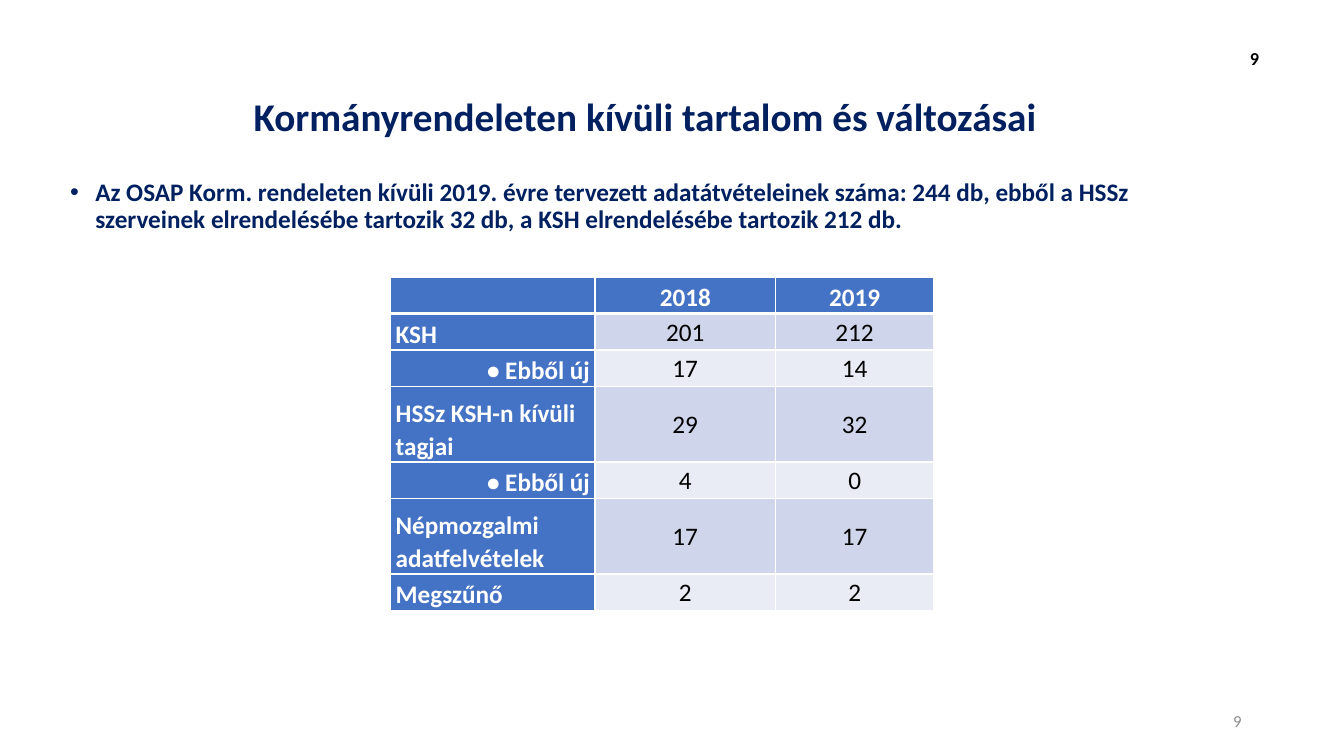
from lxml.etree import SubElement
from pptx import Presentation
from pptx.dml.color import RGBColor
from pptx.enum.text import MSO_ANCHOR as Anchor, MSO_AUTO_SIZE as AutoSize, PP_ALIGN as Align
from pptx.oxml import parse_xml
from pptx.oxml.ns import nsdecls, qn
from pptx.util import Pt

FONT = "Calibri"
NAVY = RGBColor(0x00, 0x20, 0x60)
BLUE = RGBColor(0x44, 0x72, 0xC4)
BAND_DARK = RGBColor(0xCF, 0xD5, 0xEA)
BAND_LIGHT = RGBColor(0xE9, 0xEB, 0xF5)
WHITE = RGBColor(0xFF, 0xFF, 0xFF)
BLACK = RGBColor(0x00, 0x00, 0x00)
GRAY = RGBColor(0x8C, 0x8C, 0x8C)

COLUMN_WIDTHS = (146, 129, 113)
SINGLE_ROW, DOUBLE_ROW = 26, 54
TABLE_ROWS = (
    ("", "2018", "2019"),
    ("KSH", "201", "212"),
    ("• Ebből új", "17", "14"),
    ("HSSz KSH-n kívüli tagjai", "29", "32"),
    ("• Ebből új", "4", "0"),
    ("Népmozgalmi adatfelvételek", "17", "17"),
    ("Megszűnő", "2", "2"),
)


def style_paragraph(paragraph, size, color, bold=False, align=Align.LEFT, spacing=1.0):
    """Set the font, alignment and line spacing of a paragraph."""
    paragraph.alignment = align
    paragraph.line_spacing = spacing
    font = paragraph.font
    font.name, font.size, font.bold = FONT, Pt(size), bold
    font.color.rgb = color


def add_text(slide, box, text, anchor):
    """Add a wrapping text box and return its paragraph."""
    frame = slide.shapes.add_textbox(*map(Pt, box)).text_frame
    frame.word_wrap = True
    frame.vertical_anchor = anchor
    paragraph = frame.paragraphs[0]
    paragraph.text = text
    return paragraph


def add_title(slide, box, text):
    """Place and format the title placeholder."""
    title = slide.shapes.title
    title.left, title.top, title.width, title.height = map(Pt, box)
    frame = title.text_frame
    frame.text = text
    frame.auto_size = AutoSize.NONE
    frame.vertical_anchor = Anchor.MIDDLE
    style_paragraph(frame.paragraphs[0], 28, NAVY, True, spacing=0.9)


def add_bullet(slide, box, text):
    """Add a bulleted statement with a hanging indent."""
    paragraph = add_text(slide, box, text, Anchor.TOP)
    properties = paragraph._p.get_or_add_pPr()
    properties.set("marL", str(Pt(18)))
    properties.set("indent", str(-Pt(18)))
    SubElement(properties, qn("a:buFont"), typeface="Arial")
    SubElement(properties, qn("a:buChar"), char="•")
    style_paragraph(paragraph, 18, NAVY, True, spacing=0.9)


def add_page_number(slide, box, size, color, bold):
    """Add a right-aligned page number."""
    paragraph = add_text(slide, box, "9", Anchor.MIDDLE)
    style_paragraph(paragraph, size, color, bold, Align.RIGHT)


def set_borders(cell, top, bottom):
    """Draw white cell borders with the given top and bottom widths."""
    properties = cell._tc.get_or_add_tcPr()
    for index, (side, width) in enumerate(zip("LRTB", (1, 1, top, bottom))):
        properties.insert(index, parse_xml(
            f'<a:ln{side} {nsdecls("a")} w="{Pt(width)}"><a:solidFill>'
            f'<a:srgbClr val="{WHITE}"/></a:solidFill></a:ln{side}>'))


def fill_cell(cell, text, row, column):
    """Write and format one table cell according to its place."""
    heading = row == 0 or column == 0
    band = BAND_DARK if row % 2 else BAND_LIGHT
    cell.fill.solid()
    cell.fill.fore_color.rgb = BLUE if heading else band
    set_borders(cell, 3 if row == 1 else 1, 3 if row == 0 else 1)
    cell.margin_left = cell.margin_right = Pt(3.6)
    cell.margin_top = cell.margin_bottom = 0
    cell.vertical_anchor = Anchor.BOTTOM if heading else Anchor.MIDDLE
    if column:
        align = Align.CENTER
    else:
        align = Align.RIGHT if text.startswith("•") else Align.LEFT
    paragraph = cell.text_frame.paragraphs[0]
    if text:
        paragraph.text = text
    style_paragraph(paragraph, 18, WHITE if heading else BLACK, heading, align, 1.07)


def add_data_table(slide, left, top):
    """Add the table of yearly counts at the given corner."""
    heights = [DOUBLE_ROW if " " in row[0] and not row[0].startswith("•") else SINGLE_ROW
               for row in TABLE_ROWS]
    box = (left, top, sum(COLUMN_WIDTHS), sum(heights))
    table = slide.shapes.add_table(
        len(TABLE_ROWS), len(COLUMN_WIDTHS), *map(Pt, box)).table
    table.first_row = table.horz_banding = False
    for column, width in zip(table.columns, COLUMN_WIDTHS):
        column.width = Pt(width)
    for row, (height, texts) in enumerate(zip(heights, TABLE_ROWS)):
        table.rows[row].height = Pt(height)
        for column, text in enumerate(texts):
            fill_cell(table.cell(row, column), text, row, column)


def main():
    """Build and save the presentation."""
    presentation = Presentation()
    presentation.slide_width, presentation.slide_height = Pt(960), Pt(540)
    slide = presentation.slides.add_slide(presentation.slide_layouts[5])
    add_page_number(slide, (678, 500.5, 216, 28.8), 12, GRAY, False)
    add_page_number(slide, (878, 27.5, 28.5, 28.8), 13, BLACK, True)
    add_title(slide, (174, 56, 598, 57), "Kormányrendeleten kívüli tartalom és változásai")
    add_bullet(slide, (43, 125, 793, 60),
               "Az OSAP Korm. rendeleten kívüli 2019. évre tervezett adatátvételeinek száma: "
               "244 db, ebből a HSSz szerveinek elrendelésébe tartozik 32 db, "
               "a KSH elrendelésébe tartozik 212 db.")
    add_data_table(slide, 279, 198)
    presentation.save("out.pptx")


if __name__ == "__main__":
    main()
